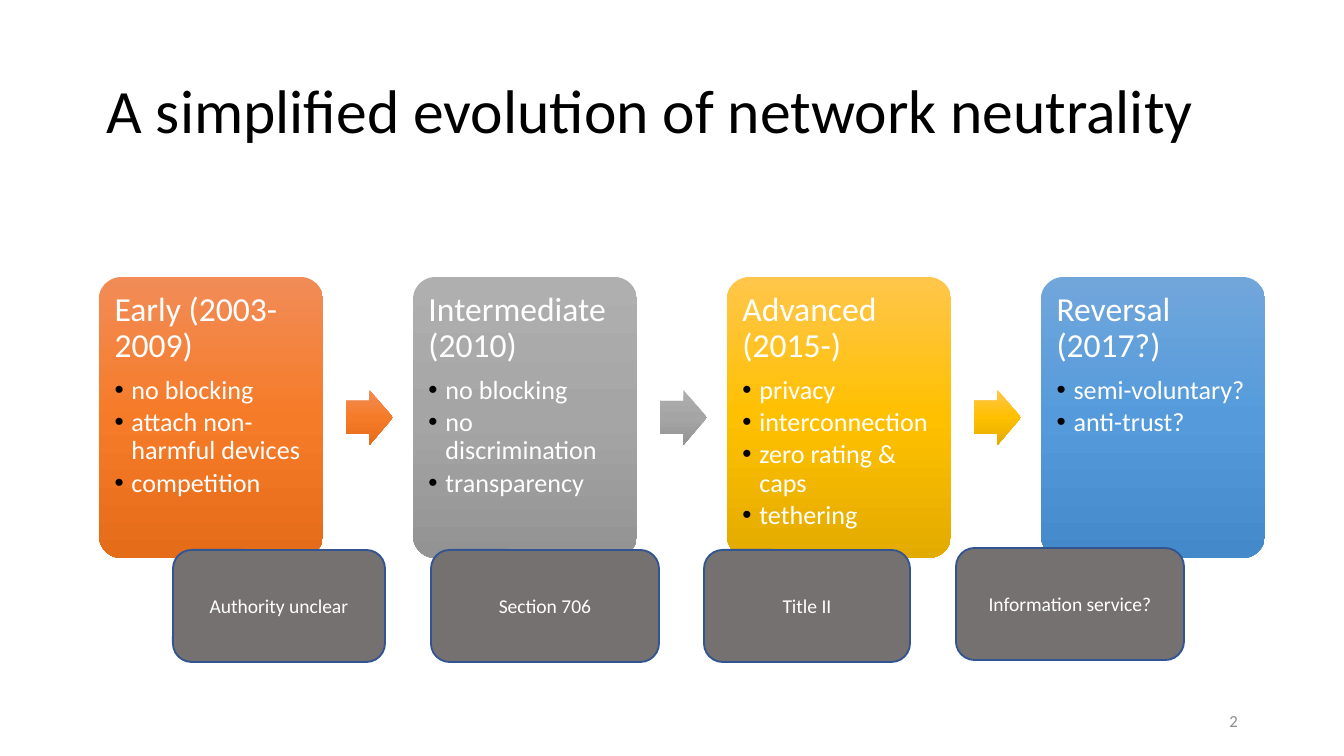
from copy import deepcopy

from lxml.etree import SubElement
from pptx import Presentation
from pptx.dml.color import RGBColor
from pptx.enum.shapes import MSO_SHAPE as Shape
from pptx.enum.text import MSO_ANCHOR as Anchor, MSO_AUTO_SIZE as Fit, PP_ALIGN as Align
from pptx.oxml.ns import qn
from pptx.util import Pt

PX = 914400 / 134.4
HUES = {
    "black": "000000", "white": "FFFFFF", "page": "8C8C8C",
    "note": "767171", "edge": "325491",
    "orange": ("F18C57", "F67B28", "E56C19"),
    "grey": ("AFAFAF", "A5A5A5", "939393"),
    "gold": ("FFC64B", "FFC000", "E3AB00"),
    "blue": ("71A6DB", "559BDB", "448ACA"),
}


def px(*nums):
    return [round(n * PX) for n in nums]


def write(frame, text, size=14, hue="white", align=Align.LEFT, line=1.0, after=0, dot=False):
    """Add one paragraph to the frame, filling its first one if that is empty."""
    para = frame.paragraphs[0]
    if para.runs:
        para = frame.add_paragraph()
    para.alignment, para.line_spacing, para.space_after = align, line, Pt(after)
    run = para.add_run()
    run.text = text
    run.font.size, run.font.name = Pt(size), "Calibri"
    run.font.color.rgb = RGBColor.from_string(HUES[hue])
    if dot:
        para.level = 1
        props = para._p.get_or_add_pPr()
        dent, = px(17)
        props.set("marL", str(dent))
        props.set("indent", str(-dent))
        tint = SubElement(props, qn("a:buClr"))
        SubElement(tint, qn("a:srgbClr"), val=HUES["black"])
        SubElement(props, qn("a:buFont"), typeface="Arial")
        SubElement(props, qn("a:buChar"), char="•")


deck = Presentation()
deck.slide_width, deck.slide_height = px(1344, 756)
slide = deck.slides.add_slide(deck.slide_layouts[5])
shapes = slide.shapes

title = shapes.title
title.left, title.top, title.width, title.height = px(93, 40, 1158, 147)
frame = title.text_frame
frame.auto_size, frame.vertical_anchor = Fit.NONE, Anchor.MIDDLE
write(frame, "A simplified evolution of network neutrality", size=33, hue="black", line=0.9)

page = shapes.add_textbox(*px(949, 701, 302, 40)).text_frame
page.word_wrap, page.vertical_anchor = True, Anchor.MIDDLE
write(page, "2", size=9, hue="page", align=Align.RIGHT)

# Four stages, with an arrow in each gap in the hue of the stage before it
stages = [
    ("orange", "Early (2003-2009)",
     ["no blocking", "attach non-harmful devices", "competition"]),
    ("grey", "Intermediate (2010)",
     ["no blocking", "no discrimination", "transparency"]),
    ("gold", "Advanced (2015-)",
     ["privacy", "interconnection", "zero rating & caps", "tethering"]),
    ("blue", "Reversal (2017?)", ["semi-voluntary?", "anti-trust?"]),
]
for i, (hue, head, points) in enumerate(stages):
    left = 99 + 314 * i
    card = shapes.add_shape(Shape.ROUNDED_RECTANGLE, *px(left, 277, 224, 281))
    card.adjustments[0] = 0.1
    parts = [card]
    if i < len(stages) - 1:
        arrow = shapes.add_shape(Shape.RIGHT_ARROW, *px(left + 247, 390, 47, 55))
        arrow.adjustments[0], arrow.adjustments[1] = 0.6, 0.5
        parts.append(arrow)

    for part in parts:
        part.shadow.inherit = False
        part.line.fill.background()
        part.fill.gradient()
        part.fill.gradient_angle = 270
        stops = part._element.spPr.find(".//" + qn("a:gsLst"))
        stops.insert(1, deepcopy(stops[0]))
        for stop, tone, spot in zip(part.fill.gradient_stops, HUES[hue], (0, 0.5, 1)):
            stop.color.rgb = RGBColor.from_string(tone)
            stop.position = spot

    frame = card.text_frame
    frame.word_wrap, frame.vertical_anchor = True, Anchor.TOP
    frame.margin_left, frame.margin_top, frame.margin_right, frame.margin_bottom = px(9, 9, 9, 9)
    write(frame, head, size=18, line=0.9, after=6.3)
    for point in points:
        write(frame, point, line=0.9, after=2.1, dot=True)

# Legal basis of each stage
notes = [
    ("Section 706", 431, 550, 228),
    ("Authority unclear", 173, 550, 212),
    ("Title II", 704, 550, 206),
    ("Information service?", 956, 548, 228),
]
for text, left, top, width in notes:
    note = shapes.add_shape(Shape.ROUNDED_RECTANGLE, *px(left, top, width, 112))
    note.shadow.inherit = False
    note.fill.solid()
    note.fill.fore_color.rgb = RGBColor.from_string(HUES["note"])
    note.line.color.rgb = RGBColor.from_string(HUES["edge"])
    note.line.width = Pt(1)
    note.text_frame.word_wrap = True
    note.text_frame.vertical_anchor = Anchor.MIDDLE
    write(note.text_frame, text, size=10.5, align=Align.CENTER)

deck.save("out.pptx")
